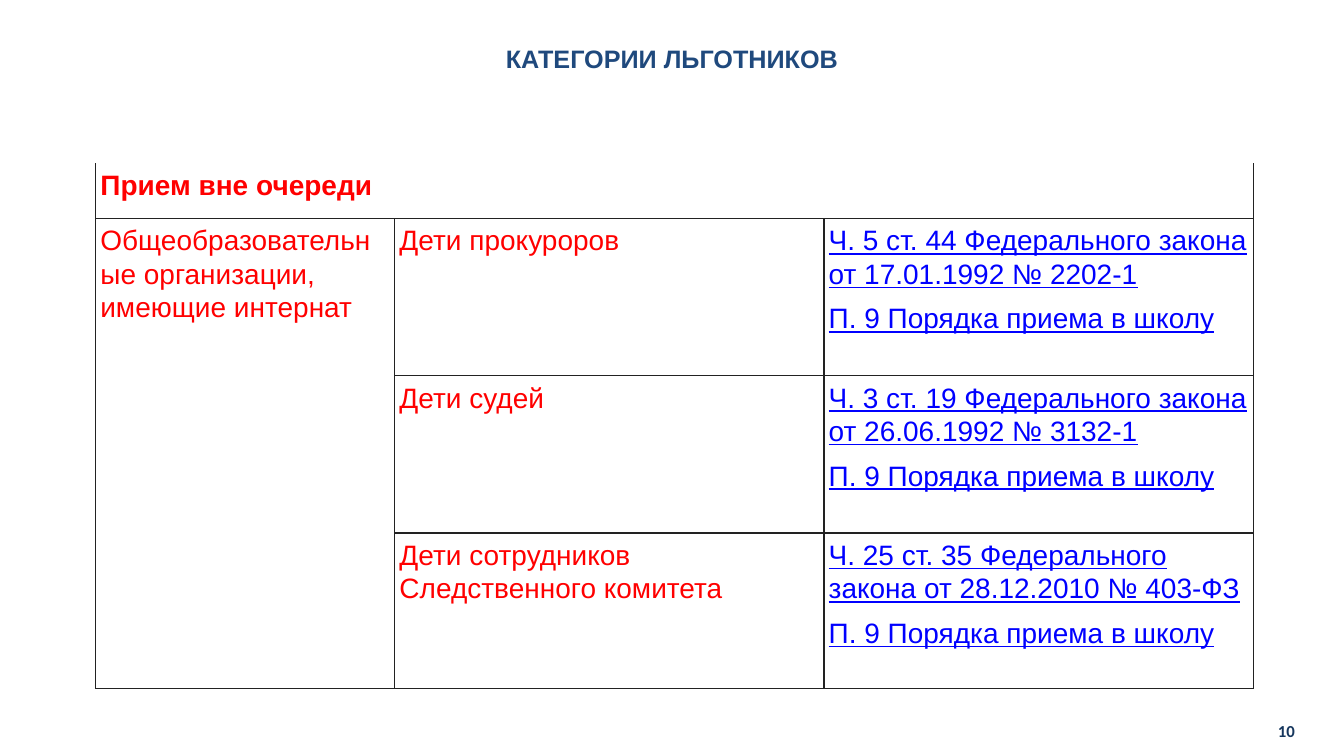
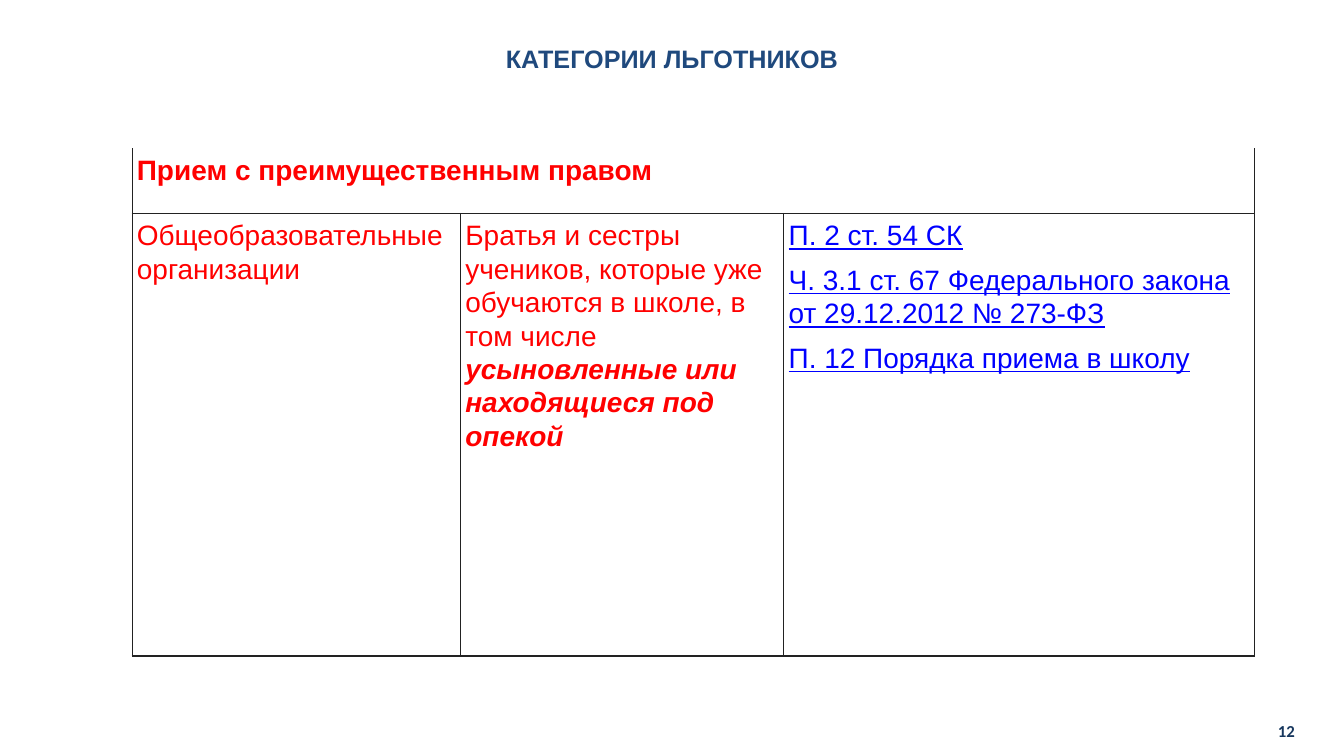
from dataclasses import dataclass

from lxml.etree import SubElement
from pptx import Presentation
from pptx.dml.color import RGBColor
from pptx.enum.text import MSO_ANCHOR, PP_ALIGN
from pptx.oxml.ns import qn
from pptx.slide import Slide
from pptx.table import _Cell
from pptx.text.text import _Paragraph
from pptx.util import Cm, Pt

TITLE_TEXT = "КАТЕГОРИИ ЛЬГОТНИКОВ"
TITLE_COLOUR = "1F497D"
NUMBER_COLOUR = "17375E"
CATEGORY_COLOUR = "FF0000"
LAW_COLOUR = "0000FF"
BORDER_COLOUR = "222222"
CELL_COLOUR = "FFFFFF"
CELL_MARGIN = Cm(0.12)
SCHOOL_RULES = "П. 9 Порядка приема в школу"


@dataclass(frozen=True)
class Span:
    text: str
    size: float = 20
    colour: str = CATEGORY_COLOUR
    font: str = "Arial"
    bold: bool = False
    italic: bool = False
    underline: bool = False


@dataclass(frozen=True)
class Category:
    who: list[Span]
    laws: list[str]


@dataclass(frozen=True)
class CategoryPage:
    number: int
    left: float
    top: float
    widths: list[float]
    heights: list[float]
    heading: str
    schools: str
    categories: list[Category]


PAGES = [
    CategoryPage(
        10, 2.41, 4.11, [7.54, 10.82, 10.82], [1.4, 3.96, 3.96, 3.91],
        "Прием вне очереди",
        "Общеобразовательные организации, имеющие интернат",
        [
            Category([Span("Дети прокуроров")],
                     ["Ч. 5 ст. 44 Федерального закона от 17.01.1992 № 2202-1", SCHOOL_RULES]),
            Category([Span("Дети судей")],
                     ["Ч. 3 ст. 19 Федерального закона от 26.06.1992 № 3132-1", SCHOOL_RULES]),
            Category([Span("Дети сотрудников Следственного комитета")],
                     ["Ч. 25 ст. 35 Федерального закона от 28.12.2010 № 403-ФЗ", SCHOOL_RULES]),
        ],
    ),
    CategoryPage(
        12, 3.33, 3.73, [8.28, 8.15, 11.86], [1.65, 11.15],
        "Прием с преимущественным правом",
        "Общеобразовательные организации",
        [
            Category([Span("Братья и сестры учеников, которые уже обучаются в школе, в том числе "),
                      Span("усыновленные или находящиеся под опекой", bold=True, italic=True)],
                     ["П. 2 ст. 54 СК",
                      "Ч. 3.1 ст. 67 Федерального закона от 29.12.2012 № 273-ФЗ",
                      "П. 12 Порядка приема в школу"]),
        ],
    ),
]


def colour(value: str) -> RGBColor:
    return RGBColor.from_string(value)


def add_span(para: _Paragraph, span: Span) -> None:
    run = para.add_run()
    run.text = span.text
    font = run.font
    font.name, font.size = span.font, Pt(span.size)
    font.bold, font.italic, font.underline = span.bold, span.italic, span.underline
    font.color.rgb = colour(span.colour)


def add_label(page: Slide, left: float, top: float, width: float, height: float,
              span: Span, align: PP_ALIGN, anchor: MSO_ANCHOR) -> None:
    box = page.shapes.add_textbox(Cm(left), Cm(top), Cm(width), Cm(height))
    frame = box.text_frame
    frame.word_wrap = True
    frame.vertical_anchor = anchor
    frame.margin_left = frame.margin_right = Cm(0.31)
    frame.margin_top = frame.margin_bottom = Cm(0.17)
    para = frame.paragraphs[0]
    para.alignment = align
    add_span(para, span)


def style_cell(cell: _Cell, is_heading: bool) -> None:
    """Outline the cell, leaving the heading row open at the top."""
    cell.margin_left = cell.margin_right = CELL_MARGIN
    cell.margin_top = cell.margin_bottom = CELL_MARGIN
    properties = cell._tc.get_or_add_tcPr()
    for side in ("lnL", "lnR", "lnT", "lnB"):
        line = SubElement(properties, qn(f"a:{side}"), w=str(Pt(1)))
        if is_heading and side == "lnT":
            SubElement(line, qn("a:noFill"))
        else:
            fill = SubElement(line, qn("a:solidFill"))
            SubElement(fill, qn("a:srgbClr"), val=BORDER_COLOUR)
    cell.fill.solid()
    cell.fill.fore_color.rgb = colour(CELL_COLOUR)


def fill_cell(cell: _Cell, paragraphs: list[list[Span]]) -> None:
    frame = cell.text_frame
    for index, spans in enumerate(paragraphs):
        para = frame.add_paragraph() if index else frame.paragraphs[0]
        para.line_spacing = 1.07
        para.space_after = Pt(8)
        for span in spans:
            add_span(para, span)


def add_category_table(page: Slide, content: CategoryPage) -> None:
    widths = [Cm(width) for width in content.widths]
    heights = [Cm(height) for height in content.heights]
    table = page.shapes.add_table(len(heights), len(widths), Cm(content.left), Cm(content.top),
                                  sum(widths), sum(heights)).table
    table.first_row = table.horz_banding = False
    for column, width in zip(table.columns, widths):
        column.width = width
    for index, (row, height) in enumerate(zip(table.rows, heights)):
        row.height = height
        for cell in row.cells:
            style_cell(cell, is_heading=index == 0)

    last_row = len(heights) - 1
    table.cell(0, 0).merge(table.cell(0, len(widths) - 1))
    if last_row > 1:
        table.cell(1, 0).merge(table.cell(last_row, 0))

    fill_cell(table.cell(0, 0), [[Span(content.heading, bold=True)]])
    fill_cell(table.cell(1, 0), [[Span(content.schools)]])
    for index, category in enumerate(content.categories, start=1):
        fill_cell(table.cell(index, 1), [category.who])
        fill_cell(table.cell(index, 2),
                  [[Span(law, colour=LAW_COLOUR, underline=True)] for law in category.laws])


def main() -> None:
    deck = Presentation()
    deck.slide_width, deck.slide_height = Cm(33.88), Cm(19.05)
    blank = deck.slide_layouts[6]
    for content in PAGES:
        page = deck.slides.add_slide(blank)
        add_label(page, 0, 0.91, 33.88, 1.12, Span(TITLE_TEXT, 18, TITLE_COLOUR, bold=True),
                  PP_ALIGN.CENTER, MSO_ANCHOR.TOP)
        add_label(page, 30.28, 17.91, 2.67, 1.02,
                  Span(str(content.number), 12, NUMBER_COLOUR, "Calibri", bold=True),
                  PP_ALIGN.RIGHT, MSO_ANCHOR.MIDDLE)
        add_category_table(page, content)
    deck.save("out.pptx")


if __name__ == "__main__":
    main()
